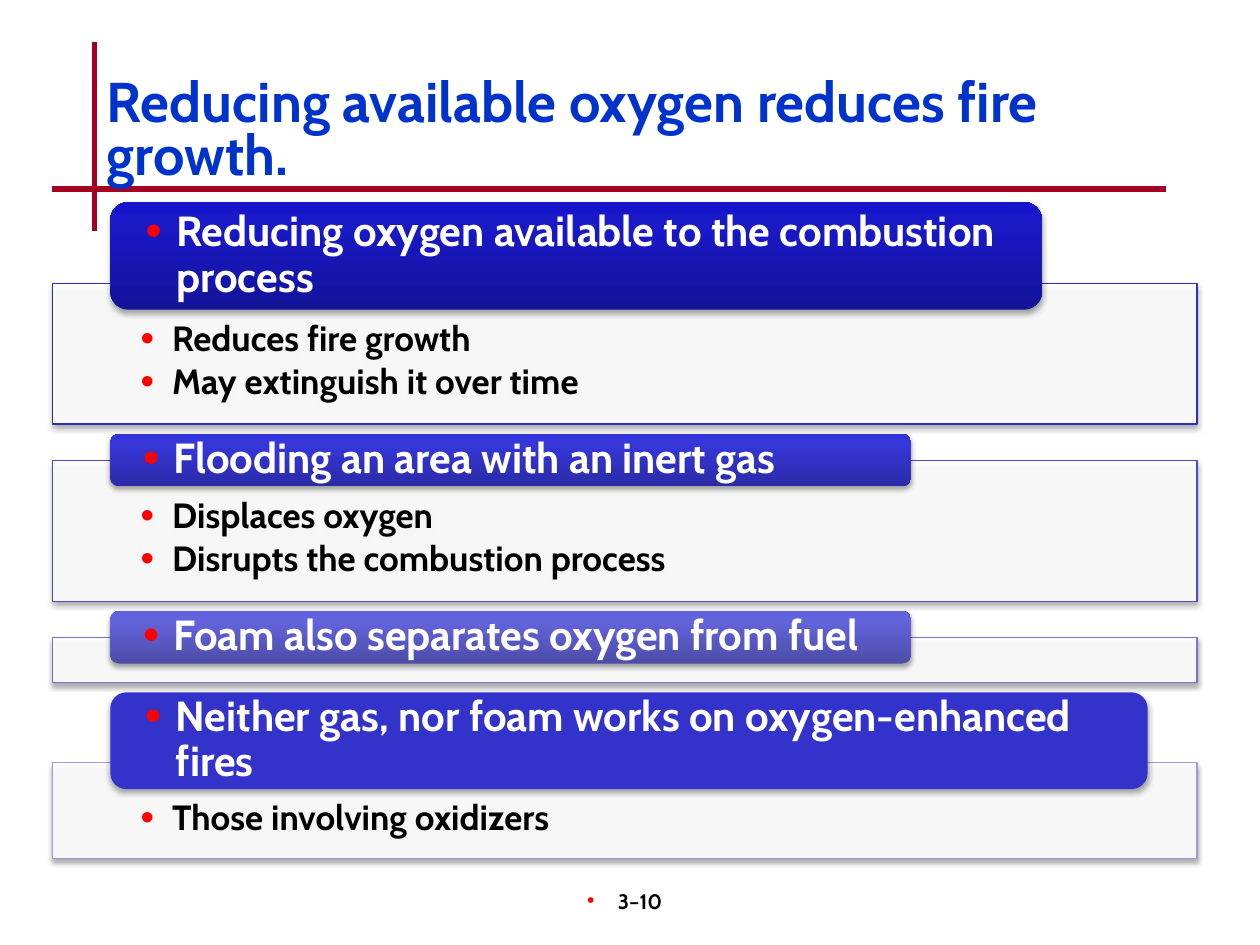
from copy import deepcopy

from lxml import etree
from pptx import Presentation
from pptx import util as u
from pptx.dml.color import RGBColor
from pptx.enum import shapes, text
from pptx.oxml.ns import qn

Pt = u.Pt
FONT = "Cabin"
RED, BLACK, WHITE = "FF0000", "000000", "FFFFFF"
PANEL_LEFT, PANEL_WIDTH, HEADING_LEFT = 30, 654, 63

# heading, points, panel (top, height), heading (top, width, height), panel line, heading fill
SECTIONS = [
    ("Reducing oxygen available to the combustion process",
     ["Reduces fire growth", "May extinguish it over time"],
     (161.8, 80.6), (115.5, 532.5, 61.5), "2E2EB9", ["13139A", "1919C8", "1515CC"]),
    ("Flooding an area with an inert gas",
     ["Displaces oxygen", "Disrupts the combustion process"],
     (263, 80.6), (248, 457.8, 30), "4B4BCD", ["2A2AA7", "3636D9", "3333DD"]),
    ("Foam also separates oxygen from fuel", [],
     (364.4, 25.8), (349.2, 457.8, 30), "7474D4", ["4C4CA9", "6363DB", "6161DF"]),
    ("Neither gas, nor foam works on oxygen-enhanced fires",
     ["Those involving oxidizers"],
     (435.8, 54.8), (395.6, 592.8, 55.3), "9C9CDD", ["3333CC"]),
]


def color(value):
    return RGBColor.from_string(value)


def add(parent, tag, **attributes):
    return etree.SubElement(parent, qn(tag), {k: str(v) for k, v in attributes.items()})


def add_bullet(paragraph, indent, size=110):
    properties = paragraph._p.get_or_add_pPr()
    properties.set("marL", str(Pt(indent)))
    properties.set("indent", str(-Pt(indent)))
    add(add(properties, "a:buClr"), "a:srgbClr", val=RED)
    add(properties, "a:buSzPct", val=size * 1000)
    add(properties, "a:buFont", typeface="Arial")
    add(properties, "a:buChar", char="•")


def write(paragraph, words, size, hue, spacing=None, align=text.PP_ALIGN.LEFT):
    paragraph.alignment = align
    if spacing:
        paragraph.line_spacing = spacing
    run = paragraph.add_run()
    run.text = words
    run.font.name, run.font.size, run.font.bold = FONT, Pt(size), True
    run.font.color.rgb = color(hue)


def set_frame(shape, anchor, insets):
    frame = shape.text_frame
    frame.word_wrap = True
    frame.vertical_anchor = anchor
    frame.margin_left, frame.margin_top, frame.margin_right, frame.margin_bottom = map(Pt, insets)
    return frame


def add_shadow(shape):
    shape.shadow.inherit = False
    effects = shape._element.spPr.find(qn("a:effectLst"))
    shadow = add(effects, "a:outerShdw", blurRad=Pt(3.1), dist=Pt(1.8), dir=5400000,
                 rotWithShape=0)
    add(add(shadow, "a:srgbClr", val=BLACK), "a:alpha", val=35000)


def fill_heading(shape, hues):
    if len(hues) == 1:
        shape.fill.solid()
        shape.fill.fore_color.rgb = color(hues[0])
        return
    shape.fill.gradient()
    shape.fill.gradient_angle = 90
    stop_list = shape._element.spPr.find(".//" + qn("a:gsLst"))
    stop_list.insert(1, deepcopy(stop_list[0]))
    for stop, hue, position in zip(shape.fill.gradient_stops, hues, (0, 0.8, 1)):
        stop.color.rgb = color(hue)
        stop.position = position


def add_panel(slide, box, points, line_hue):
    panel = slide.shapes.add_shape(shapes.MSO_SHAPE.RECTANGLE, *map(Pt, box))
    panel.fill.solid()
    panel.fill.fore_color.rgb = color(WHITE)
    add(panel._element.spPr.find(".//" + qn("a:srgbClr")), "a:alpha", val=90000)
    panel.line.color.rgb = color(line_hue)
    panel.line.width = Pt(0.75)
    add_shadow(panel)
    if not points:
        return
    frame = set_frame(panel, text.MSO_ANCHOR.TOP, (50.4, 21.6, 50.4, 11.5))
    for number, point in enumerate(points):
        paragraph = frame.add_paragraph() if number else frame.paragraphs[0]
        add_bullet(paragraph, 18)
        paragraph.space_after = Pt(3)
        write(paragraph, point, 20, BLACK, 0.9)


def add_heading(slide, box, words, hues):
    heading = slide.shapes.add_shape(shapes.MSO_SHAPE.ROUNDED_RECTANGLE, *map(Pt, box))
    fill_heading(heading, hues)
    heading.line.fill.background()
    add_shadow(heading)
    frame = set_frame(heading, text.MSO_ANCHOR.MIDDLE, (17.3, 0, 17.3, 0))
    add_bullet(frame.paragraphs[0], 17.5)
    write(frame.paragraphs[0], words, 24, WHITE, 0.9)


def add_rules(slide, box):
    left, top, right, bottom = box
    for ends in ((54, top, 54, bottom), (left, 108, right, 108)):
        rule = slide.shapes.add_connector(shapes.MSO_CONNECTOR.STRAIGHT, *map(Pt, ends))
        rule.line.color.rgb = color("A50021")
        rule.line.width = Pt(3)
        add(rule._element.spPr, "a:effectLst")


def add_title(slide, box):
    title = slide.shapes.add_textbox(*map(Pt, box))
    frame = set_frame(title, text.MSO_ANCHOR.MIDDLE, (7.2, 3.6, 7.2, 3.6))
    write(frame.paragraphs[0], "Reducing available oxygen reduces fire growth.", 32, "0033CC", 0.8)


def add_page_number(slide, box):
    number = slide.shapes.add_textbox(*map(Pt, box))
    frame = set_frame(number, text.MSO_ANCHOR.TOP, (7.2, 3.6, 7.2, 3.6))
    add_bullet(frame.paragraphs[0], 17.5, 100)
    write(frame.paragraphs[0], "3–10", 12, BLACK, align=text.PP_ALIGN.CENTER)


def main():
    deck = Presentation()
    deck.slide_width, deck.slide_height = Pt(720), Pt(540)
    slide = deck.slides.add_slide(deck.slide_layouts[6])

    # Title area
    add_rules(slide, (30, 24, 666, 132))
    add_title(slide, (54, 40, 612, 72))

    # Sections, each heading overlapping its panel
    for words, points, (top, height), (head_top, width, head_height), line_hue, hues in SECTIONS:
        add_panel(slide, (PANEL_LEFT, top, PANEL_WIDTH, height), points, line_hue)
        add_heading(slide, (HEADING_LEFT, head_top, width, head_height), words, hues)

    # Footer
    add_page_number(slide, (282, 504, 150, 36))
    deck.save("out.pptx")


if __name__ == "__main__":
    main()
